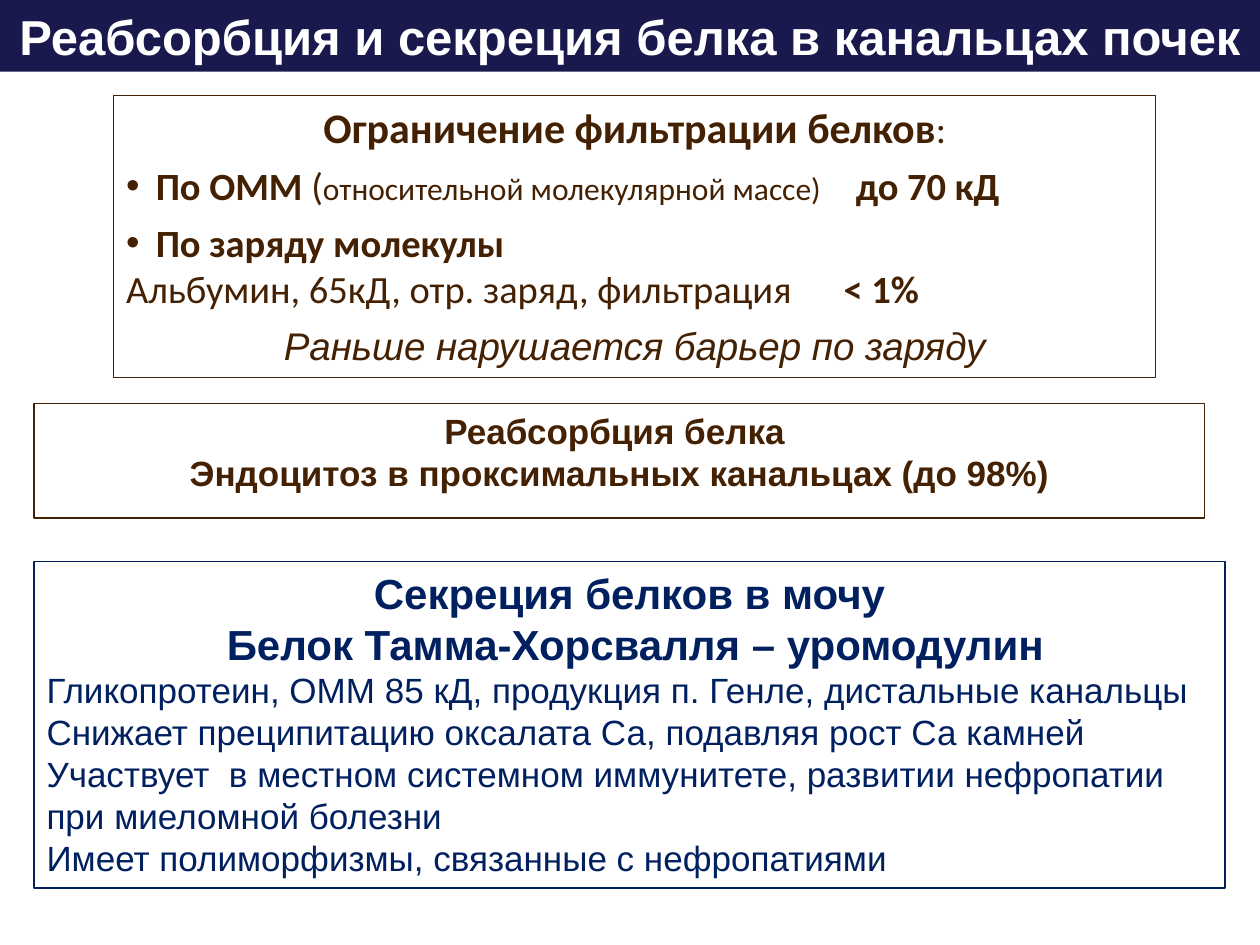
from lxml import etree
from pptx import Presentation
from pptx.dml.color import RGBColor
from pptx.enum import shapes, text
from pptx.oxml import ns
from pptx.util import Pt

COLORS = {"band": "19194D", "white": "FFFFFF", "brown": "452103", "navy": "002060"}
HANGING = 17

BOLD = {"bold": True}
HEADING = {"bold": True, "size": Pt(24)}
BODY = {"size": Pt(20)}
CALIBRI = {"name": "Calibri", "size": Pt(22)}
CALIBRI_BOLD = CALIBRI | BOLD

# Each paragraph: layout options, then (text, font) runs
title = [({"center": True}, [("Реабсорбция и секреция белка в канальцах почек", BOLD | {"size": Pt(28)})])]

filtration = [
    ({"center": True, "after": 6}, [("Ограничение фильтрации белков", CALIBRI | HEADING), (":", CALIBRI)]),
    ({"bullet": True, "after": 6, "tab": 417}, [
        ("По ОММ ", CALIBRI_BOLD),
        ("(", CALIBRI),
        ("относительной молекулярной массе)", CALIBRI | {"size": Pt(18)}),
        ("\tдо 70 кД", CALIBRI_BOLD),
    ]),
    ({"bullet": True}, [("По заряду молекулы", CALIBRI_BOLD)]),
    ({"after": 6, "tab": 410}, [
        ("Альбумин, 65кД, отр. заряд, фильтрация", CALIBRI),
        ("\t< 1%", CALIBRI_BOLD),
    ]),
    ({"center": True, "after": 6}, [
        ("Раньше нарушается барьер по заряду", {"size": Pt(22), "italic": True}),
    ]),
]

reabsorption = [
    ({"center": True}, [(line, BODY | BOLD)])
    for line in ("Реабсорбция белка ", "Эндоцитоз в проксимальных канальцах (до 98%)")
]

secretion = [
    ({"center": True}, [(line, HEADING)])
    for line in ("Секреция белков в мочу", " Белок Тамма-Хорсвалля – уромодулин")
] + [
    ({}, [(line, BODY)])
    for line in (
        "Гликопротеин, ОММ 85 кД, продукция п. Генле, дистальные канальцы",
        "Снижает преципитацию оксалата Са, подавляя рост Са камней",
        "Участвует  в местном системном иммунитете, развитии нефропатии при миеломной болезни",
        "Имеет полиморфизмы, связанные с нефропатиями",
    )
]

# (left, top, width, height), fill, outline, text colour, paragraphs
panels = [
    ((0, 0, 720, 41), "band", None, "white", title),
    ((19.5, 321, 680.5, 186.5), None, "navy", "navy", secretion),
    ((19.5, 230.5, 669, 65.5), None, "brown", "brown", reabsorption),
    ((65, 54.5, 595.5, 161.3), None, "brown", "brown", filtration),
]


def rgb(color):
    return RGBColor.from_string(COLORS[color])


def set_bullet_and_tab(paragraph, layout):
    properties = paragraph._p.get_or_add_pPr()
    if layout.get("bullet"):
        properties.set("marL", str(Pt(HANGING)))
        properties.set("indent", str(-Pt(HANGING)))
        etree.SubElement(properties, ns.qn("a:buFont"), typeface="Arial")
        etree.SubElement(properties, ns.qn("a:buChar"), char="•")
    if "tab" in layout:
        tabs = etree.SubElement(properties, ns.qn("a:tabLst"))
        etree.SubElement(tabs, ns.qn("a:tab"), pos=str(Pt(layout["tab"])), algn="l")


deck = Presentation()
deck.slide_width, deck.slide_height = Pt(720), Pt(540)
slide = deck.slides.add_slide(deck.slide_layouts[6])

for box, fill, outline, ink, paragraphs in panels:
    panel = slide.shapes.add_shape(shapes.MSO_SHAPE.RECTANGLE, *map(Pt, box))
    panel.shadow.inherit = False
    if fill:
        panel.fill.solid()
        panel.fill.fore_color.rgb = rgb(fill)
    else:
        panel.fill.background()
    if outline:
        panel.line.color.rgb = rgb(outline)
        panel.line.width = Pt(0.75)
    else:
        panel.line.fill.background()

    frame = panel.text_frame
    frame.word_wrap = True
    frame.vertical_anchor = text.MSO_ANCHOR.TOP
    for index, (layout, runs) in enumerate(paragraphs):
        paragraph = frame.add_paragraph() if index else frame.paragraphs[0]
        paragraph.alignment = text.PP_ALIGN.CENTER if layout.get("center") else text.PP_ALIGN.LEFT
        paragraph.space_after = Pt(layout.get("after", 0))
        set_bullet_and_tab(paragraph, layout)
        for words, font in runs:
            run = paragraph.add_run()
            run.text = words
            run.font.color.rgb = rgb(ink)
            for attribute, value in ({"name": "Arial", "bold": False} | font).items():
                setattr(run.font, attribute, value)

deck.save("out.pptx")
